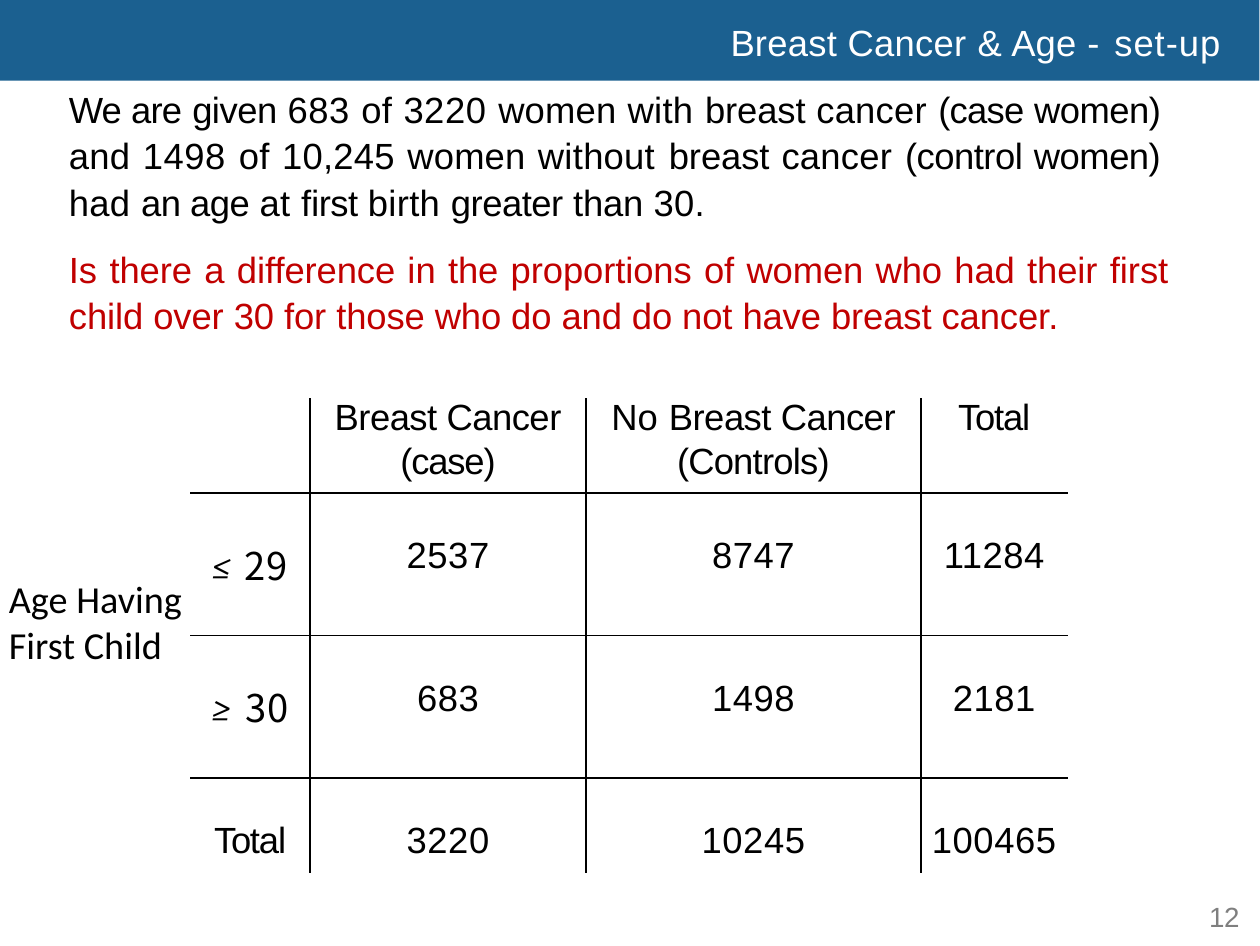
"""Build the slide that sets up the breast cancer and age comparison."""
from pptx import Presentation
from pptx.dml.color import RGBColor
from pptx.enum.shapes import MSO_SHAPE
from pptx.enum.text import PP_ALIGN
from pptx.oxml.xmlchemy import OxmlElement
from pptx.util import Pt

RECT = MSO_SHAPE.RECTANGLE
CENTER, JUSTIFY = PP_ALIGN.CENTER, PP_ALIGN.JUSTIFY

THEME = {
    "bar": "1B6090", "white": "FFFFFF", "black": "000000",
    "red": "C00000", "grey": "7F7F7F",
    "sans": "Arial", "label": "Calibri", "math": "Cambria", "cjk": "Noto Sans CJK TC",
    "body": 10.5, "large": 11, "small": 8, "line": 0.5,
}

TITLE = [("Breast Cancer ", 0.1), ("& ", -0.2), ("Age ", 0.1), ("- ", 0.7), ("set-up", 0.3)]
GIVEN = [
    ("We are ", -0.2), ("given ", -0.1), ("683 ", 0.2), ("of ", 0.1), ("3220 ", 0.2),
    ("women with ", 0.1), ("breast ", 0), ("cancer ", 0.1), ("(case ", -0.2),
    ("women) ", -0.1), ("and ", 0.1), ("1498 ", 0.2),
    ("of 10,245 women without ", 0.1), ("breast ", 0), ("cancer ", 0.1),
    ("(control women) ", -0.1), ("had ", 0.1), ("an age ", -0.1), ("at ", 0.1),
    ("ﬁrst ", -0.1), ("birth ", 0.1), ("greater ", -0.1), ("than ", 0), ("30.", 0.1),
]
QUESTION = [("Is there a difference in the proportions of women who had their first "
             "child over 30 for those who do and do not have breast cancer.", 0)]
BODY = [(GIVEN, "black", 20.8), (QUESTION, "red", 18)]
HEADERS = [
    [],
    [[("Breast Cancer", -0.1)], [("(case)", -0.3)]],
    [[("No ", 0.1), ("Breast Cancer", -0.1)], [("(Controls)", -0.2)]],
    [[("Total", -0.3)]],
]
ROWS = [
    (("≤ ", "29"), ("2537", "8747", "11284")),
    (("≥ ", "30"), ("683", "1498", "2181")),
    (("Total",), ("3220", "10245", "100465")),
]
SIDE_LABEL = "Age Having First Child"
PAGE = "12"

SLIDE = (363, 272.5)
BAR = (362.85, 23.3)
COLS = [34.5, 79.6, 96.4, 42.3]
HEIGHTS = [27.36, 41.04, 41.04, 27.36]
TABLE_AT = (54.8, 114.7)
VALUE_TOP, AGE_TOP = 12.4, 12.2


def add_run(p, text, spacing=0, size="body", font="sans", color="black", italic=False):
    r = p.add_run()
    r.text = text
    r.font.size = Pt(THEME[size])
    r.font.name = THEME[font]
    r.font.italic = italic
    r.font.color.rgb = RGBColor.from_string(THEME[color])
    r.font._element.set("spc", str(round(spacing * 100)))


def add_runs(p, runs, **style):
    for text, spacing in runs:
        add_run(p, text, spacing, **style)


def add_box(s, x, y, w, h, margins=(7.2, 3.6, 7.2, 3.6), wrap=True):
    tf = s.shapes.add_textbox(Pt(x), Pt(y), Pt(w), Pt(h)).text_frame
    tf.word_wrap = wrap
    tf.margin_left, tf.margin_top, tf.margin_right, tf.margin_bottom = map(Pt, margins)
    return tf


def indent(p, left, right=0):
    pPr = p._p.get_or_add_pPr()
    pPr.set("marL", str(Pt(left)))
    pPr.set("marR", str(Pt(right)))


def set_borders(cell, row, col):
    tcPr = cell._tc.get_or_add_tcPr()
    shown = {"L": col > 0, "R": col < len(COLS) - 1, "T": row > 0, "B": row < len(HEIGHTS) - 1}
    for side, visible in shown.items():
        ln = OxmlElement(f"a:ln{side}")
        ln.set("w", str(Pt(THEME["line"])))
        fill = OxmlElement("a:solidFill" if visible else "a:noFill")
        if visible:
            clr = OxmlElement("a:srgbClr")
            clr.set("val", THEME["black"])
            fill.append(clr)
        ln.append(fill)
        tcPr.append(ln)


def fill_header(cell, lines):
    tf = cell.text_frame
    for i, runs in enumerate(lines):
        p = tf.add_paragraph() if i else tf.paragraphs[0]
        p.alignment = CENTER
        if i:
            p.space_before = Pt(0.9)
        else:
            p.line_spacing = Pt(11.6)
        add_runs(p, runs)


def fill_value(cell, text, spacing=0.2):
    cell.margin_top = Pt(VALUE_TOP)
    p = cell.text_frame.paragraphs[0]
    p.alignment = CENTER
    add_run(p, text, spacing)


def fill_age(cell, sign, age):
    cell.margin_top = Pt(AGE_TOP)
    p = cell.text_frame.paragraphs[0]
    p.alignment = CENTER
    add_run(p, sign, 0.8, size="large", font="math", italic=True)
    add_run(p, age, 0.2, size="large", font="cjk")


def add_counts(s):
    x, y = TABLE_AT
    table = s.shapes.add_table(len(HEIGHTS), len(COLS), Pt(x), Pt(y),
                               Pt(sum(COLS)), Pt(sum(HEIGHTS))).table
    table.first_row = table.horz_banding = False
    for column, width in zip(table.columns, COLS):
        column.width = Pt(width)
    for i, height in enumerate(HEIGHTS):
        table.rows[i].height = Pt(height)
        for j in range(len(COLS)):
            cell = table.cell(i, j)
            cell.margin_left = cell.margin_right = cell.margin_top = cell.margin_bottom = 0
            set_borders(cell, i, j)
            cell.fill.background()
    for j, lines in enumerate(HEADERS):
        fill_header(table.cell(0, j), lines)
    for i, (label, values) in enumerate(ROWS, 1):
        if len(label) == 2:
            fill_age(table.cell(i, 0), *label)
        else:
            fill_value(table.cell(i, 0), label[0], -0.3)
        for j, value in enumerate(values, 1):
            fill_value(table.cell(i, j), value)


def main():
    prs = Presentation()
    prs.slide_width, prs.slide_height = map(Pt, SLIDE)
    s = prs.slides.add_slide(prs.slide_layouts[6])

    bar = s.shapes.add_shape(RECT, 0, 0, *map(Pt, BAR))
    bar.shadow.inherit = False
    bar.fill.solid()
    bar.fill.fore_color.rgb = RGBColor.from_string(THEME["bar"])
    bar.line.fill.background()

    tf = add_box(s, 19, 4.5, 336.2, 95, (0, 1.3, 0, 0))
    p = tf.paragraphs[0]
    indent(p, 191.5)
    p.space_before = Pt(1.4)
    add_runs(p, TITLE, color="white")
    for runs, color, right in BODY:
        p = tf.add_paragraph()
        p.alignment = JUSTIFY
        p.line_spacing = 1.07
        p.space_before = Pt(5.7)
        indent(p, 0.9, right)
        add_runs(p, runs, color=color)

    p = add_box(s, 347.6, 258.3, 10.8, 11.5, (0, 0.9, 0, 0), wrap=False).paragraphs[0]
    indent(p, 0.7)
    p.space_before = Pt(0.6)
    add_run(p, PAGE, -0.1, size="small", color="grey")

    add_counts(s)

    p = add_box(s, -4.5, 162.2, 72, 33.8).paragraphs[0]
    add_run(p, SIDE_LABEL, size="large", font="label")

    prs.save("out.pptx")


if __name__ == "__main__":
    main()
